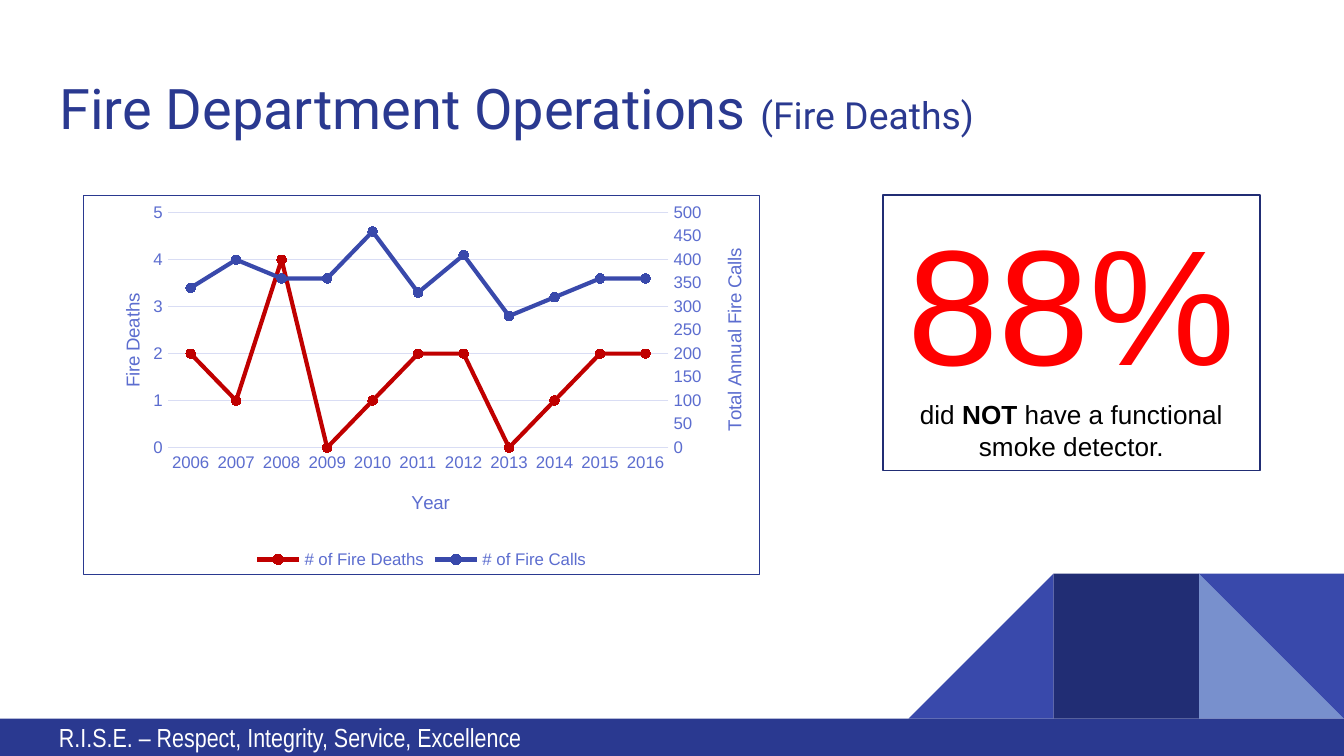
from copy import deepcopy

from lxml import etree
from pptx import Presentation
from pptx.chart import axis as chart_axis, data as chart_data
from pptx.dml.color import RGBColor
from pptx.enum import chart as ch, shapes, text
from pptx.oxml import ns
from pptx.util import Pt

NAVY = RGBColor(0x2A, 0x39, 0x90)
DARK_NAVY = RGBColor(0x21, 0x2D, 0x74)
INDIGO = RGBColor(0x39, 0x49, 0xAB)
PALE_BLUE = RGBColor(0x78, 0x90, 0xCD)
LABEL_BLUE = RGBColor(0x5C, 0x6D, 0xCF)
GRID = RGBColor(0xD9, 0xDD, 0xF4)
DEEP_RED = RGBColor(0xC0, 0x00, 0x00)
RED = RGBColor(0xFF, 0x00, 0x00)
BLACK = RGBColor(0, 0, 0)
WHITE = RGBColor(0xFF, 0xFF, 0xFF)

YEARS = [str(year) for year in range(2006, 2017)]
DEATHS = [2, 1, 4, 0, 1, 2, 2, 0, 1, 2, 2]
CALLS = [340, 400, 360, 360, 460, 330, 410, 280, 320, 360, 360]


def style_font(font, size, color, name="Arial", bold=False):
    font.size, font.name, font.bold = Pt(size), name, bold
    font.color.rgb = color


def add_run(paragraph, words, *style, **options):
    run = paragraph.add_run()
    run.text = words
    style_font(run.font, *style, **options)


def add_block(slide, kind, left, top, width, height, fill=None, line=None):
    block = slide.shapes.add_shape(kind, Pt(left), Pt(top), Pt(width), Pt(height))
    block.shadow.inherit = False
    if fill is None:
        block.fill.background()
    else:
        block.fill.solid()
        block.fill.fore_color.rgb = fill
    if line is None:
        block.line.fill.background()
    else:
        block.line.color.rgb = line
        block.line.width = Pt(0.75)
    return block


def add_decoration(slide):
    side, top, right = 77.75, 307.25, 720
    triangle, square = shapes.MSO_SHAPE.RIGHT_TRIANGLE, shapes.MSO_SHAPE.RECTANGLE
    # Each tile: shape, columns from the right edge, colour, rotation, mirrored
    tiles = [
        (triangle, 1, PALE_BLUE, 0, False),
        (triangle, 3, INDIGO, 0, True),
        (square, 2, DARK_NAVY, 0, False),
        (triangle, 1, INDIGO, 180, False),
    ]
    for kind, column, color, rotation, mirrored in tiles:
        tile = add_block(slide, kind, right - column * side, top, side, side, color)
        tile.rotation = rotation
        if mirrored:
            tile.element.spPr.xfrm.set("flipH", "1")


def add_footer(slide):
    add_block(slide, shapes.MSO_SHAPE.RECTANGLE, 0, 385, 720, 20, NAVY)
    motto = slide.shapes.add_textbox(Pt(24.5), Pt(383), Pt(394), Pt(24.5)).text_frame
    motto.word_wrap = True
    add_run(motto.paragraphs[0], "R.I.S.E. – Respect, Integrity, Service, Excellence",
            14, WHITE, "Arial Narrow")


def set_title(slide):
    title = slide.shapes.title
    title.left, title.top, title.width, title.height = Pt(24.5), Pt(32.4), Pt(671), Pt(47.5)
    frame = title.text_frame
    frame.margin_left = frame.margin_right = frame.margin_top = frame.margin_bottom = Pt(7.2)
    frame.vertical_anchor = text.MSO_ANCHOR.TOP
    frame.auto_size = text.MSO_AUTO_SIZE.NONE
    heading = frame.paragraphs[0]
    heading.alignment = text.PP_ALIGN.LEFT
    add_run(heading, "Fire Department Operations ", 30, NAVY, "Roboto")
    add_run(heading, "(Fire Deaths)", 20, NAVY, "Roboto")


def place(layout, inner=False, **fractions):
    """Fix a chart part at fractions of the chart area."""
    manual = etree.SubElement(layout, ns.qn("c:manualLayout"))
    settings = {"layoutTarget": "inner"} if inner else {}
    settings.update(xMode="edge", yMode="edge", **fractions)
    for tag, value in settings.items():
        etree.SubElement(manual, ns.qn("c:" + tag)).set("val", str(value))


def title_axis(axis, words, x, y, upright=False):
    axis.has_title = False
    title = axis.axis_title
    add_run(title.text_frame.paragraphs[0], words, 10, LABEL_BLUE)
    if upright:
        title.element.find(".//" + ns.qn("a:bodyPr")).set("rot", "-5400000")
    place(title.element.find(ns.qn("c:layout")), x=x, y=y)


def style_axis(axis):
    axis.major_tick_mark = axis.minor_tick_mark = ch.XL_TICK_MARK.NONE
    style_font(axis.tick_labels.font, 9, LABEL_BLUE)


def set_scale(axis, maximum, step):
    axis.minimum_scale, axis.maximum_scale, axis.major_unit = 0, maximum, step


def move_to_right_axis(plot_area):
    """Give the second series its own line group and return its value axis."""
    left_lines = plot_area.find(ns.qn("c:lineChart"))
    right_lines = deepcopy(left_lines)
    left_lines.remove(left_lines.findall(ns.qn("c:ser"))[1])
    right_lines.remove(right_lines.find(ns.qn("c:ser")))
    left_lines.addnext(right_lines)

    years = deepcopy(plot_area.find(ns.qn("c:catAx")))
    values = deepcopy(plot_area.find(ns.qn("c:valAx")))
    plot_area.find(ns.qn("c:valAx")).addnext(values)
    values.addnext(years)
    ids = {years.find(ns.qn("c:axId")).get("val"): "5001",
           values.find(ns.qn("c:axId")).get("val"): "5002"}
    for part in (right_lines, years, values):
        for link in part.iter(ns.qn("c:axId"), ns.qn("c:crossAx")):
            link.set("val", ids[link.get("val")])
    values.find(ns.qn("c:axPos")).set("val", "r")
    values.find(ns.qn("c:crosses")).set("val", "max")
    chart_axis.CategoryAxis(years).visible = False
    return chart_axis.ValueAxis(values)


def add_border(chart):
    border = etree.fromstring(
        f'<c:spPr {ns.nsdecls("c", "a")}><a:noFill/><a:ln w="9525"><a:solidFill>'
        f'<a:srgbClr val="{NAVY}"/></a:solidFill></a:ln></c:spPr>')
    chart.element.find(ns.qn("c:chart")).addnext(border)


def add_fire_chart(slide):
    data = chart_data.CategoryChartData()
    data.categories = YEARS
    data.add_series("# of Fire Deaths", DEATHS)
    data.add_series("# of Fire Calls", CALLS)
    chart = slide.shapes.add_chart(ch.XL_CHART_TYPE.LINE_MARKERS, Pt(44.3), Pt(104.5),
                                   Pt(363), Pt(203.7), data).chart
    style_font(chart.font, 10, NAVY)
    chart.has_title = False
    chart.has_legend = True
    chart.legend.position = ch.XL_LEGEND_POSITION.BOTTOM
    chart.legend.include_in_layout = False
    style_font(chart.legend.font, 9, LABEL_BLUE)

    # Series
    chart.plots[0].vary_by_categories = False
    for series, color in zip(chart.plots[0].series, (DEEP_RED, INDIGO)):
        series.smooth = False
        series.format.line.color.rgb = color
        series.format.line.width = Pt(2.25)
        series.marker.style, series.marker.size = ch.XL_MARKER_STYLE.CIRCLE, 5
        series.marker.format.fill.solid()
        series.marker.format.fill.fore_color.rgb = color
        series.marker.format.line.color.rgb = color

    # Axes
    years, deaths = chart.category_axis, chart.value_axis
    style_axis(years)
    style_axis(deaths)
    years.format.line.color.rgb = GRID
    years.format.line.width = Pt(0.75)
    deaths.format.line.fill.background()
    plot_area = chart.element.find(".//" + ns.qn("c:plotArea"))
    calls = move_to_right_axis(plot_area)
    calls.has_major_gridlines = False
    deaths.has_major_gridlines = True
    deaths.major_gridlines.format.line.color.rgb = GRID
    deaths.major_gridlines.format.line.width = Pt(0.75)
    set_scale(deaths, 5, 1)
    set_scale(calls, 500, 50)
    title_axis(years, "Year", 0.48, 0.77)
    title_axis(deaths, "Fire Deaths", 0.05, 0.25, upright=True)
    title_axis(calls, "Total Annual Fire Calls", 0.94, 0.13, upright=True)

    # Plot area and frame
    layout = plot_area.find(ns.qn("c:layout"))
    if layout is None:
        layout = etree.Element(ns.qn("c:layout"))
        plot_area.insert(0, layout)
    place(layout, inner=True, x=0.125, y=0.045, w=0.74, h=0.62)
    add_border(chart)


def add_detector_box(slide):
    box = add_block(slide, shapes.MSO_SHAPE.RECTANGLE, 473, 104.5, 202, 147.5, line=DARK_NAVY)
    frame = box.text_frame
    frame.word_wrap = True
    frame.vertical_anchor = text.MSO_ANCHOR.TOP
    finding = frame.paragraphs[0]
    finding.alignment = text.PP_ALIGN.CENTER
    add_run(finding, "88%", 88, RED)
    add_run(finding, " did ", 14, BLACK)
    add_run(finding, "NOT", 14, BLACK, bold=True)
    add_run(finding, " have a functional smoke detector.", 14, BLACK)


def main():
    deck = Presentation()
    deck.slide_width, deck.slide_height = Pt(720), Pt(405)
    slide = deck.slides.add_slide(deck.slide_layouts[5])
    add_decoration(slide)
    add_footer(slide)
    set_title(slide)
    add_fire_chart(slide)
    add_detector_box(slide)
    deck.save("out.pptx")


if __name__ == "__main__":
    main()
